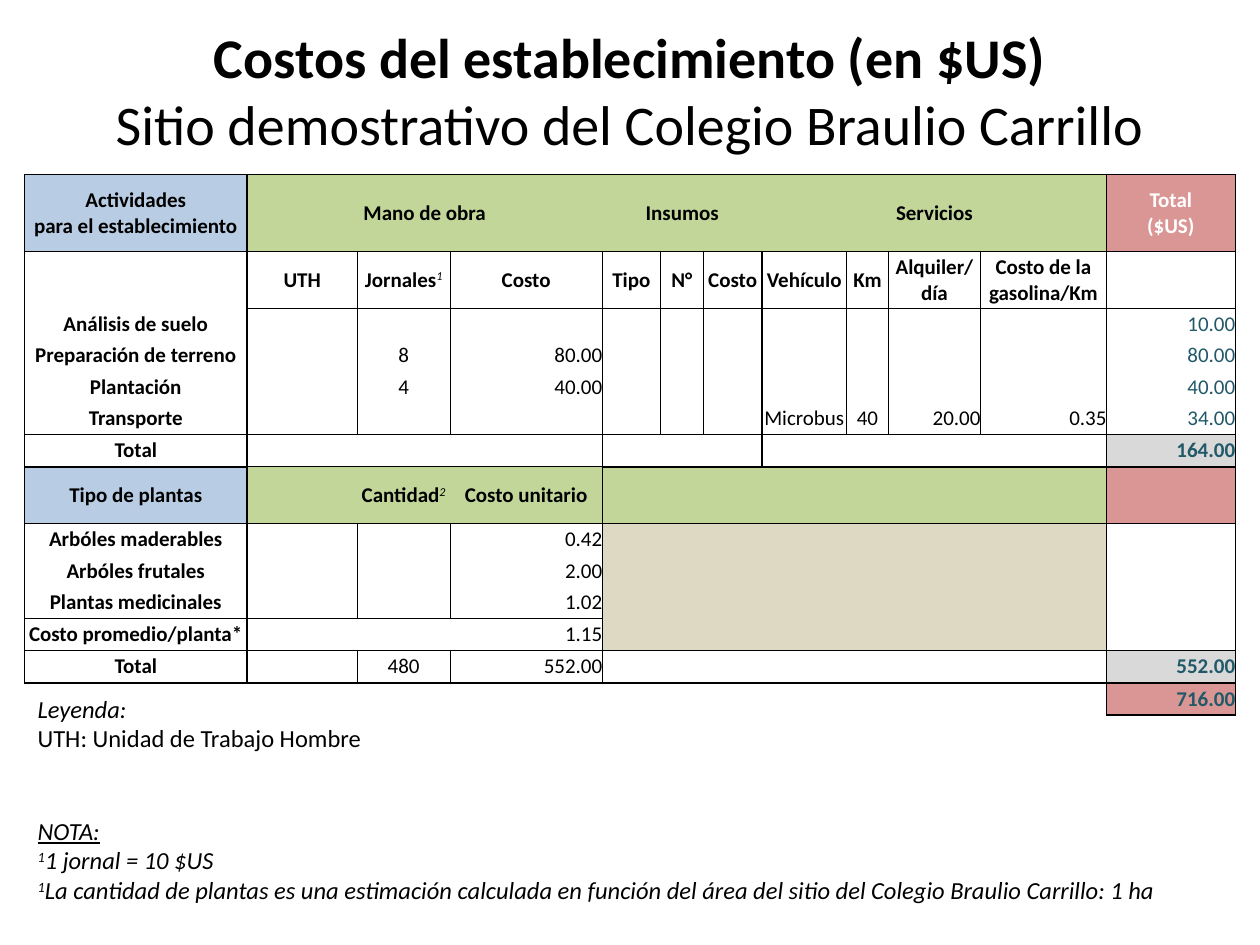
from lxml.etree import SubElement
from pptx import Presentation
from pptx.dml.color import RGBColor
from pptx.enum.shapes import MSO_SHAPE
from pptx.enum.text import MSO_ANCHOR, PP_ALIGN
from pptx.oxml.ns import qn
from pptx.util import Pt

TITLE = ["Costos del establecimiento (en $US)",
         "Sitio demostrativo del Colegio Braulio Carrillo"]
LEGEND = ["Leyenda:", "UTH: Unidad de Trabajo Hombre"]
NOTE_HEADING = "NOTA:"
NOTES = [("1", "1 jornal = 10 $US"),
         ("1", "La cantidad de plantas es una estimación calculada en función "
               "del área del sitio del Colegio Braulio Carrillo: 1 ha")]

COSTS = [
    {0: "Actividades\npara el establecimiento", 1: "Mano de obra", 4: "Insumos",
     9: "Servicios", 11: "Total\n($US)"},
    {1: "UTH", 2: "Jornales", 3: "Costo", 4: "Tipo", 5: "N°", 6: "Costo",
     7: "Vehículo", 8: "Km", 9: "Alquiler/\ndía", 10: "Costo de la gasolina/Km"},
    {0: "Análisis de suelo", 11: "10.00"},
    {0: "Preparación de terreno", 2: "8", 3: "80.00", 11: "80.00"},
    {0: "Plantación", 2: "4", 3: "40.00", 11: "40.00"},
    {0: "Transporte", 7: "Microbus", 8: "40", 9: "20.00", 10: "0.35", 11: "34.00"},
    {0: "Total", 11: "164.00"},
    {0: "Tipo de plantas", 2: "Cantidad", 3: "Costo unitario"},
    {0: "Arbóles maderables", 3: "0.42"},
    {0: "Arbóles frutales", 3: "2.00"},
    {0: "Plantas medicinales", 3: "1.02"},
    {0: "Costo promedio/planta*", 3: "1.15"},
    {0: "Total", 2: "480", 3: "552.00", 11: "552.00"},
    {11: "716.00"},
]
FOOTNOTES = {(1, 2): "1", (7, 2): "2"}
HEADER_ROWS = (0, 1, 7)
TOTAL_ROWS = (6, 12, 13)
TOTAL_COLUMN = 11
COLUMN_WIDTHS = [127.2, 63, 53, 87, 33.2, 24.5, 33.7, 48.2, 24, 52.6, 72, 73.6]
ROW_HEIGHTS = [44, 32.5] + [18] * 4 + [18.5, 32.5] + [18] * 3 + [18.5] * 3

FILLS = [
    ("B8CCE4", (0, 7), range(0, 1)),
    ("C2D69A", (0, 7), range(1, 11)),
    ("D99694", (0, 7, 13), range(11, 12)),
    ("D9D9D9", (6, 12), range(11, 12)),
    ("DDD9C3", range(8, 12), range(4, 11)),
]
HORIZONTAL_RULES = [
    (0, 0, 12, 1), (1, 0, 12, 1), (2, 1, 12, 0.5), (6, 0, 12, 1),
    (7, 0, 1, 1), (7, 1, 4, 0.5), (7, 4, 12, 1), (8, 0, 12, 1),
    (11, 0, 4, 0.5), (12, 0, 12, 1), (13, 0, 12, 1), (14, 11, 12, 1),
]
VERTICAL_RULES = [
    (0, 0, 13, 1), (1, 0, 13, 1), (4, 1, 8, 1), (4, 8, 13, 0.5),
    (7, 1, 7, 1), (11, 0, 14, 1), (12, 0, 14, 1),
    *[(column, 1, 6, 0.5) for column in (2, 3, 5, 6, 8, 9, 10)],
    *[(column, top, bottom, 0.5) for column in (2, 3) for top, bottom in ((8, 11), (12, 13))],
]
NO_STYLE = "{2D5ABB26-0587-4C30-8999-92F81FD0307C}"


def rgb(code):
    return RGBColor.from_string(code)


def write(paragraph, text, size=12, color="000000", bold=False, italic=False,
          underline=False, superscript=False, align=None):
    run = paragraph.add_run()
    run.text = text
    font = run.font
    font.name, font.size = "Calibri", Pt(size)
    font.bold, font.italic, font.underline = bold, italic, underline
    font.color.rgb = rgb(color)
    if superscript:
        run._r.get_or_add_rPr().set("baseline", "30000")
    if align is not None:
        paragraph.alignment = align


def border_widths():
    widths = {}
    for edge, start, end, width in HORIZONTAL_RULES:
        for column in range(start, end):
            widths[edge, column, "T"] = widths[edge - 1, column, "B"] = width
    for edge, start, end, width in VERTICAL_RULES:
        for row in range(start, end):
            widths[row, edge, "L"] = widths[row, edge - 1, "R"] = width
    return widths


def draw_borders(cell, row, column, widths):
    properties = cell._tc.get_or_add_tcPr()
    for side in "LRTB":
        width = widths.get((row, column, side))
        line = SubElement(properties, qn(f"a:ln{side}"), w=str(Pt(width or 0)))
        if width:
            SubElement(SubElement(line, qn("a:solidFill")), qn("a:srgbClr"), val="000000")
        else:
            SubElement(line, qn("a:noFill"))


def fill_cell(cell, row, column):
    cell.fill.background()
    for color, rows, columns in FILLS:
        if row in rows and column in columns:
            cell.fill.solid()
            cell.fill.fore_color.rgb = rgb(color)


def write_cell(cell, row, column):
    cell.vertical_anchor = MSO_ANCHOR.MIDDLE
    cell.margin_left = cell.margin_right = cell.margin_top = cell.margin_bottom = 0
    paragraph = cell.text_frame.paragraphs[0]
    text = COSTS[row].get(column)
    if text is None:
        SubElement(paragraph._p, qn("a:endParaRPr"), sz="1200")
        return
    in_total = column == TOTAL_COLUMN
    color = "000000"
    if in_total:
        color = "FFFFFF" if row == 0 else "215968"
    bold = column == 0 or row in HEADER_ROWS or (in_total and row in TOTAL_ROWS)
    align = PP_ALIGN.RIGHT if "." in text else PP_ALIGN.CENTER
    for number, line in enumerate(text.split("\n")):
        if number:
            paragraph = cell.text_frame.add_paragraph()
        write(paragraph, line, color=color, bold=bold, align=align)
    if (row, column) in FOOTNOTES:
        write(paragraph, FOOTNOTES[row, column], italic=True, superscript=True)


def add_costs(slide):
    table = slide.shapes.add_table(
        len(ROW_HEIGHTS), len(COLUMN_WIDTHS), Pt(14), Pt(99.8),
        Pt(sum(COLUMN_WIDTHS)), Pt(sum(ROW_HEIGHTS))).table
    table.first_row = table.horz_banding = False
    table._tbl.tblPr.find(qn("a:tableStyleId")).text = NO_STYLE
    for column, width in zip(table.columns, COLUMN_WIDTHS):
        column.width = Pt(width)
    for row, height in zip(table.rows, ROW_HEIGHTS):
        row.height = Pt(height)
    for start in (1, 4):
        table.cell(0, start).merge(table.cell(0, start + 2))
    widths = border_widths()
    for row in range(len(ROW_HEIGHTS)):
        for column in range(len(COLUMN_WIDTHS)):
            cell = table.cell(row, column)
            draw_borders(cell, row, column, widths)
            fill_cell(cell, row, column)
            write_cell(cell, row, column)


def add_legend(slide):
    frame = slide.shapes.add_textbox(Pt(14.4), Pt(393), Pt(201.6), Pt(41)).text_frame
    frame.word_wrap = False
    write(frame.paragraphs[0], LEGEND[0], size=14, italic=True)
    write(frame.add_paragraph(), LEGEND[1], size=14)


def add_notes(slide):
    panel = slide.shapes.add_shape(MSO_SHAPE.RECTANGLE, Pt(14.4), Pt(463), Pt(686), Pt(57))
    panel.shadow.inherit = False
    panel.fill.solid()
    panel.fill.fore_color.rgb = rgb("FFFFFF")
    panel.line.fill.background()
    frame = panel.text_frame
    frame.word_wrap = True
    write(frame.paragraphs[0], NOTE_HEADING, size=14, italic=True, underline=True,
          align=PP_ALIGN.LEFT)
    for mark, note in NOTES:
        paragraph = frame.add_paragraph()
        write(paragraph, mark, size=14, italic=True, superscript=True, align=PP_ALIGN.LEFT)
        write(paragraph, note, size=14, italic=True)


def add_title(slide):
    frame = slide.shapes.add_textbox(Pt(54), Pt(9.4), Pt(612), Pt(57)).text_frame
    frame.word_wrap = True
    paragraph = frame.paragraphs[0]
    write(paragraph, TITLE[0], size=32, bold=True, align=PP_ALIGN.CENTER)
    paragraph.add_line_break()
    write(paragraph, TITLE[1], size=32)


def main():
    deck = Presentation()
    deck.slide_width, deck.slide_height = Pt(720), Pt(540)
    slide = deck.slides.add_slide(deck.slide_layouts[6])
    for add_part in (add_costs, add_legend, add_notes, add_title):
        add_part(slide)
    deck.save("out.pptx")


if __name__ == "__main__":
    main()
